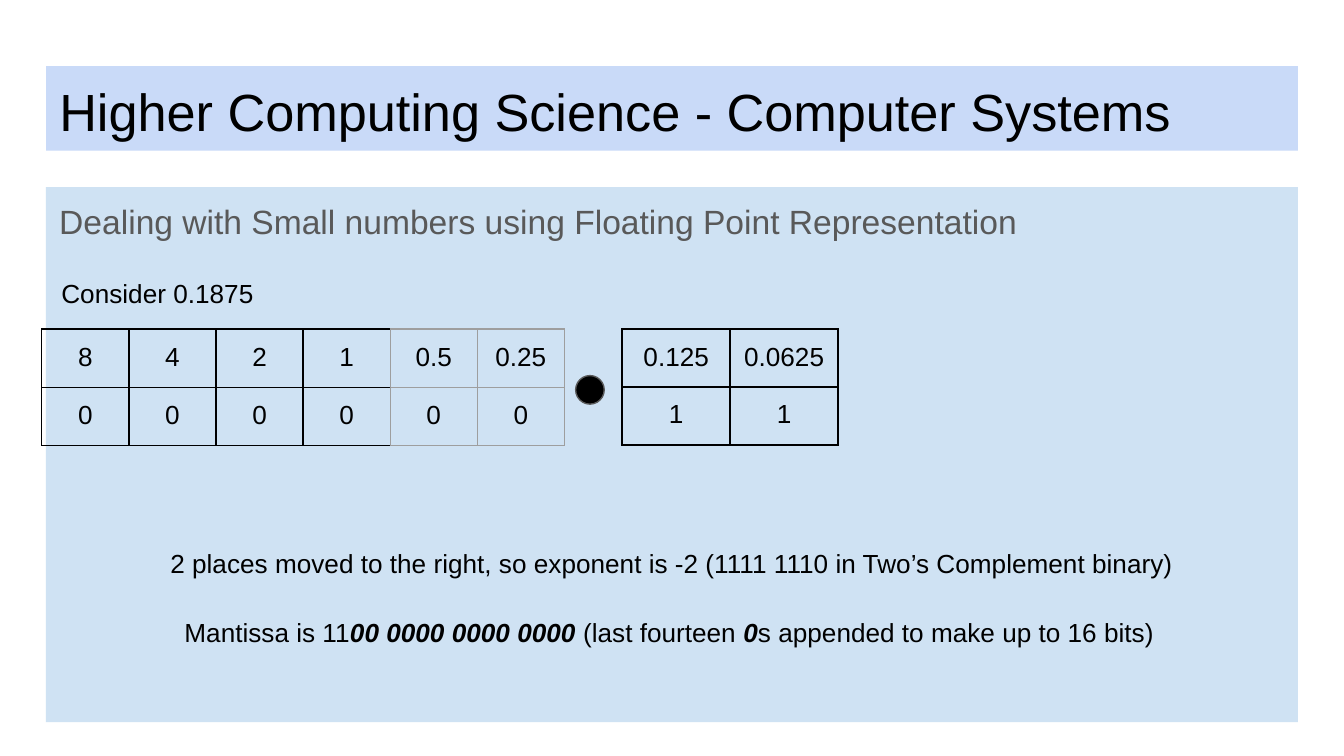
from lxml import etree
from pptx import Presentation
from pptx.dml.color import RGBColor
from pptx.enum.shapes import MSO_SHAPE
from pptx.enum.text import MSO_ANCHOR, PP_ALIGN
from pptx.oxml.ns import qn
from pptx.util import Cm, Pt

LEFT, CENTER = PP_ALIGN.LEFT, PP_ALIGN.CENTER
TOP = MSO_ANCHOR.TOP
OVAL, RECTANGLE = MSO_SHAPE.OVAL, MSO_SHAPE.RECTANGLE
TITLE_ONLY = 5
INSET = Cm(0.25)
BLACK, GREY, DARK_GREY = "000000", "9E9E9E", "595959"
TITLE_BLUE, PANEL_BLUE = "C9DAF8", "CFE2F3"


def paint(colour_format, colour):
    colour_format.rgb = RGBColor.from_string(colour)


def fill_shape(shape, colour):
    shape.fill.solid()
    paint(shape.fill.fore_color, colour)


def place(shape, box):
    shape.left, shape.top, shape.width, shape.height = (Cm(length) for length in box)


def write(frame, pieces, size, colour=BLACK, align=LEFT):
    """Fill a frame with one paragraph of (text, emphasised) pieces."""
    frame.word_wrap = True
    frame.vertical_anchor = TOP
    frame.margin_left = frame.margin_right = INSET
    frame.margin_top = frame.margin_bottom = INSET
    paragraph = frame.paragraphs[0]
    paragraph.alignment = align
    for text, emphasised in pieces:
        run = paragraph.add_run()
        run.text = text
        run.font.name = "Arial"
        run.font.size = Pt(size)
        run.font.bold = run.font.italic = emphasised
        paint(run.font.color, colour)


def add_title(slide, box):
    title = slide.shapes.title
    place(title, box)
    fill_shape(title, TITLE_BLUE)
    write(title.text_frame,
          [("Higher Computing Science - Computer Systems", False)], 28)


def add_panel(slide, box):
    panel = slide.shapes.add_shape(RECTANGLE, *map(Cm, box))
    panel.shadow.inherit = False
    fill_shape(panel, PANEL_BLUE)
    panel.line.fill.background()
    write(panel.text_frame,
          [("Dealing with Small numbers using Floating Point Representation", False)],
          18, DARK_GREY)


def add_note(slide, box, pieces, align=LEFT):
    note = slide.shapes.add_textbox(*map(Cm, box))
    write(note.text_frame, pieces, 14, align=align)


def set_border(cell, side, colour, width):
    line = etree.SubElement(cell._tc.get_or_add_tcPr(), qn(f"a:ln{side}"),
                            w=str(Pt(width)))
    solid = etree.SubElement(line, qn("a:solidFill"))
    etree.SubElement(solid, qn("a:srgbClr"), val=colour)


def add_place_values(slide, box, rows, border_width, black_columns):
    """Add place values over bits; columns after the black ones get grey borders."""
    column_count = len(rows[0])
    table = slide.shapes.add_table(len(rows), column_count, *map(Cm, box)).table
    table.first_row = table.horz_banding = False
    for column in table.columns:
        column.width = Cm(box[2] / column_count)
    for r, values in enumerate(rows):
        table.rows[r].height = Cm(box[3] / len(rows))
        for c, value in enumerate(values):
            cell = table.cell(r, c)
            own = BLACK if c < black_columns else GREY
            last_black = c == black_columns - 1 and black_columns < column_count
            right = GREY if last_black else own
            for side, colour in zip("LRTB", (own, right, own, own)):
                set_border(cell, side, colour, border_width)
            cell.fill.background()
            cell.margin_left = cell.margin_right = INSET
            cell.margin_top = cell.margin_bottom = INSET
            cell.text = value
            paragraph = cell.text_frame.paragraphs[0]
            paragraph.alignment = CENTER
            font = paragraph.runs[0].font
            font.name, font.size = "Arial", Pt(14)
            paint(font.color, BLACK)


def add_binary_point(slide, box):
    point = slide.shapes.add_shape(OVAL, *map(Cm, box))
    point.shadow.inherit = False
    fill_shape(point, BLACK)
    paint(point.line.color, DARK_GREY)
    point.line.width = Pt(0.75)


def add_floating_point_slide(deck):
    slide = deck.slides.add_slide(deck.slide_layouts[TITLE_ONLY])
    add_title(slide, (0.87, 1.25, 23.66, 1.6))
    add_panel(slide, (0.87, 3.54, 23.66, 10.11))
    add_note(slide, (0.91, 5, 12, 0.87), [("Consider 0.1875", False)])
    add_note(slide, (0.87, 10.1, 23.66, 1.14),
             [("2 places moved to the right, so exponent is -2 "
               "(1111 1110 in Two’s Complement binary)", False)], CENTER)
    add_note(slide, (0.76, 11.41, 23.78, 1.14),
             [("Mantissa is 11", False), ("00 0000 0000 0000", True),
              (" (last fourteen ", False), ("0", True),
              ("s appended to make up to 16 bits)", False)], CENTER)
    add_place_values(slide, (0.79, 6.22, 9.88, 2.2),
                     [("8", "4", "2", "1", "0.5", "0.25"), ("0",) * 6], 0.75, 4)
    add_place_values(slide, (11.76, 6.22, 4.08, 2.16),
                     [("0.125", "0.0625"), ("1", "1")], 1, 2)
    add_binary_point(slide, (10.88, 7.1, 0.54, 0.54))


def main():
    deck = Presentation()
    deck.slide_width, deck.slide_height = Cm(25.4), Cm(14.29)
    add_floating_point_slide(deck)
    deck.save("out.pptx")


if __name__ == "__main__":
    main()
